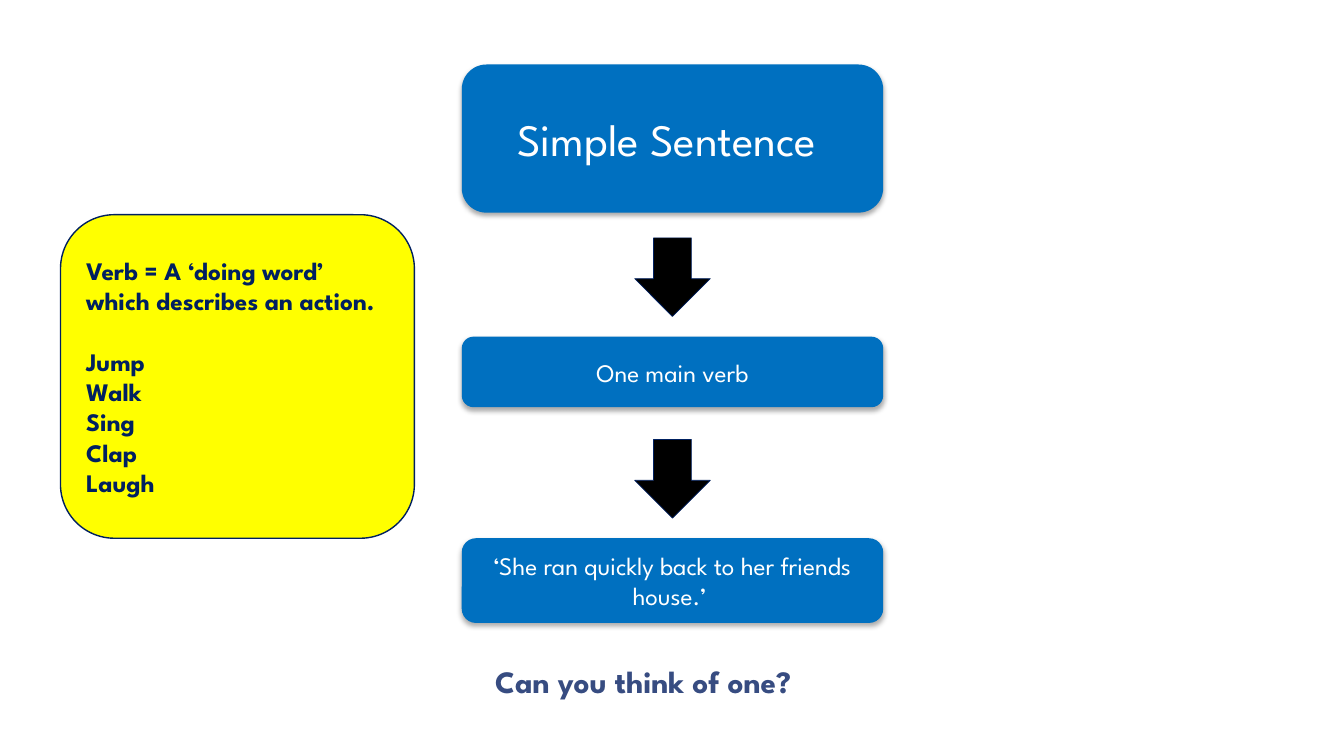
from lxml import etree
from pptx import Presentation
from pptx.dml.color import RGBColor
from pptx.enum.shapes import MSO_SHAPE
from pptx.enum.text import MSO_ANCHOR, MSO_AUTO_SIZE, PP_ALIGN
from pptx.oxml import parse_xml
from pptx.oxml.ns import nsdecls, qn
from pptx.util import Inches, Pt

ROUNDED = MSO_SHAPE.ROUNDED_RECTANGLE
DOWN_ARROW = MSO_SHAPE.DOWN_ARROW
LEFT, CENTER = PP_ALIGN.LEFT, PP_ALIGN.CENTER
TOP, MIDDLE = MSO_ANCHOR.TOP, MSO_ANCHOR.MIDDLE
NO_AUTOFIT = MSO_AUTO_SIZE.NONE

FONT = "League Spartan"
COLORS = {
    "blue": "0070C0",
    "yellow": "FFFF00",
    "navy": "002060",
    "question": "374C81",
    "white": "FFFFFF",
    "black": "000000",
}


def color(name):
    return RGBColor.from_string(COLORS[name])


def write_text(shape, lines, size=18, color_name="white", bold=False,
               align=CENTER, anchor=MIDDLE, margins=(0.1, 0.05),
               line_spacing=1.0, gap_after_first=0):
    frame = shape.text_frame
    frame.word_wrap = True
    frame.auto_size = NO_AUTOFIT
    frame.vertical_anchor = anchor
    frame.margin_left = frame.margin_right = Inches(margins[0])
    frame.margin_top = frame.margin_bottom = Inches(margins[1])
    for index, line in enumerate(lines):
        paragraph = frame.paragraphs[0] if index == 0 else frame.add_paragraph()
        properties = paragraph._p.get_or_add_pPr()
        properties.set("marL", "0")
        properties.set("indent", "0")
        etree.SubElement(properties, qn("a:buNone"))
        paragraph.alignment = align
        paragraph.line_spacing = line_spacing
        paragraph.space_before = Pt(gap_after_first if index == 1 else 0)
        paragraph.space_after = Pt(0)
        run = paragraph.add_run()
        run.text = line
        run.font.name = FONT
        run.font.size = Pt(size)
        run.font.bold = bold
        run.font.color.rgb = color(color_name)


def add_box(slide, kind, box, fill, line=None, line_width=1):
    shape = slide.shapes.add_shape(kind, *map(Inches, box))
    shape.shadow.inherit = False
    shape.fill.solid()
    shape.fill.fore_color.rgb = color(fill)
    if line:
        shape.line.color.rgb = color(line)
        shape.line.width = Pt(line_width)
    else:
        shape.line.fill.background()
    return shape


def add_blue_box(slide, box):
    shape = add_box(slide, ROUNDED, box, "blue")
    effects = shape._element.spPr.find(qn("a:effectLst"))
    effects.append(parse_xml(
        f'<a:outerShdw {nsdecls("a")} blurRad="{Pt(3.5)}" dist="{Pt(2.2)}" '
        f'dir="5400000" rotWithShape="0"><a:srgbClr val="{COLORS["black"]}">'
        '<a:alpha val="32000"/></a:srgbClr></a:outerShdw>'))
    return shape


def place(shape, box):
    shape.left, shape.top, shape.width, shape.height = map(Inches, box)


def add_heading(slide, box):
    add_blue_box(slide, box)
    title = slide.shapes.title
    place(title, box)
    slide.shapes._spTree.append(title._element)
    write_text(title, ["Simple Sentence "], size=32)


def add_steps(slide, box):
    left, top, width, pitch = box
    arrow_width, arrow_height, arrow_to_step = 0.75, 0.78, 0.98
    steps = [("One main verb", 0.7),
             ("‘She ran quickly back to her friends house.’ ", 0.84)]
    for index, (text, height) in enumerate(steps):
        arrow_top = top + index * pitch
        arrow_left = left + (width - arrow_width) / 2
        add_box(slide, DOWN_ARROW,
                (arrow_left, arrow_top, arrow_width, arrow_height),
                "black", line="navy", line_width=0.5)
        step = add_blue_box(slide, (left, arrow_top + arrow_to_step, width, height))
        write_text(step, [text])


def add_question(slide, box):
    question = slide.placeholders[1]
    place(question, box)
    write_text(question, ["Can you think of one?"], size=22.2,
               color_name="question", bold=True, align=LEFT, anchor=TOP,
               margins=(0.13, 0.07), line_spacing=0.95)


def add_verb_note(slide, box):
    note = add_box(slide, ROUNDED, box, "yellow", line="navy")
    lines = ["Verb = A ‘doing word’ which describes an action.",
             "Jump", "Walk", "Sing", "Clap", "Laugh"]
    write_text(note, lines, color_name="navy", bold=True, align=LEFT,
               gap_after_first=21.6)


def main():
    presentation = Presentation()
    presentation.slide_width = Inches(13.33)
    presentation.slide_height = Inches(7.5)
    slide = presentation.slides.add_slide(presentation.slide_layouts[1])
    slide.background.fill.solid()
    slide.background.fill.fore_color.rgb = color("white")
    add_heading(slide, (4.58, 0.64, 4.18, 1.47))
    add_steps(slide, (4.58, 2.36, 4.18, 2))
    add_question(slide, (4.78, 6.53, 3.77, 0.66))
    add_verb_note(slide, (0.6, 2.13, 3.51, 3.21))
    presentation.save("out.pptx")


if __name__ == "__main__":
    main()
